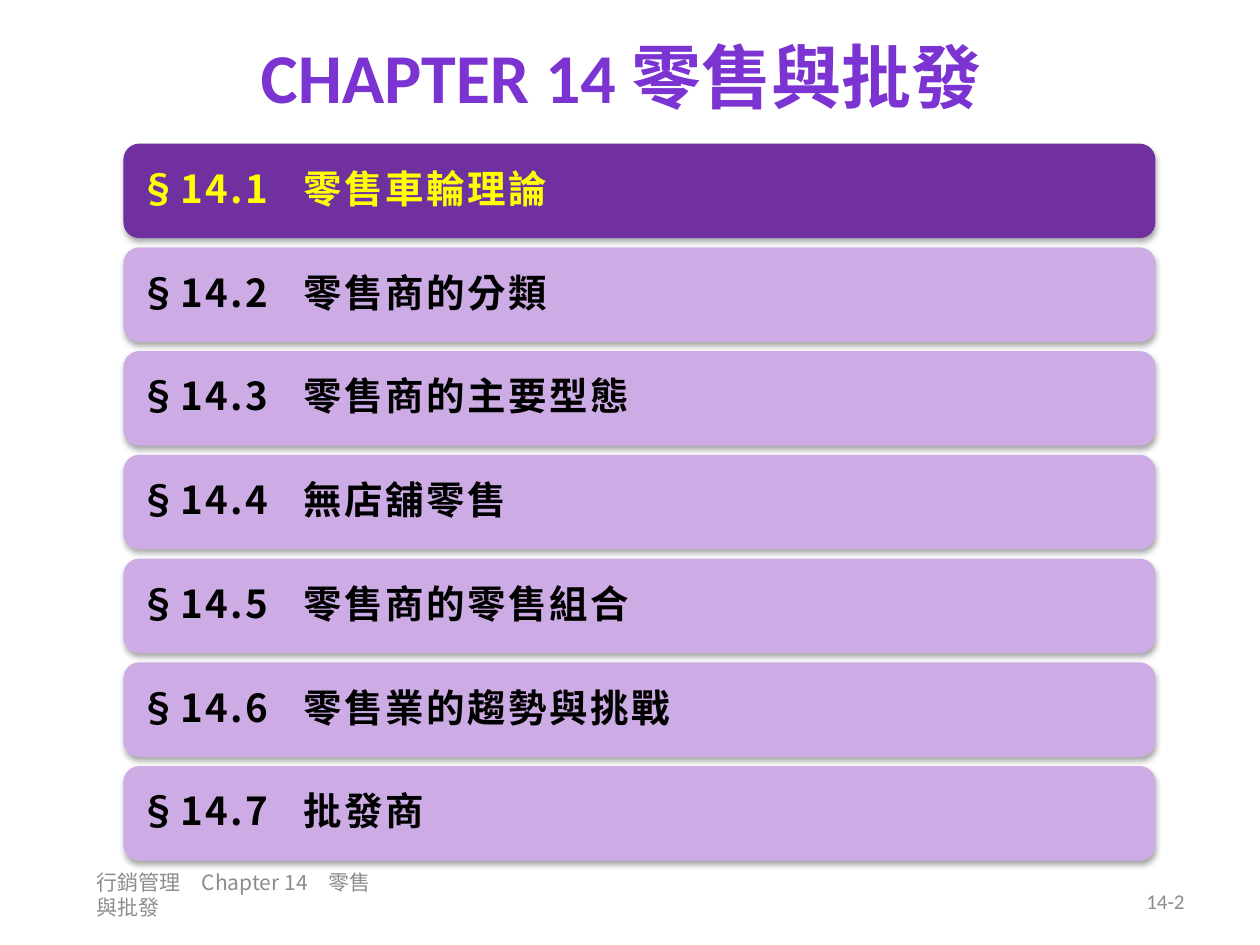
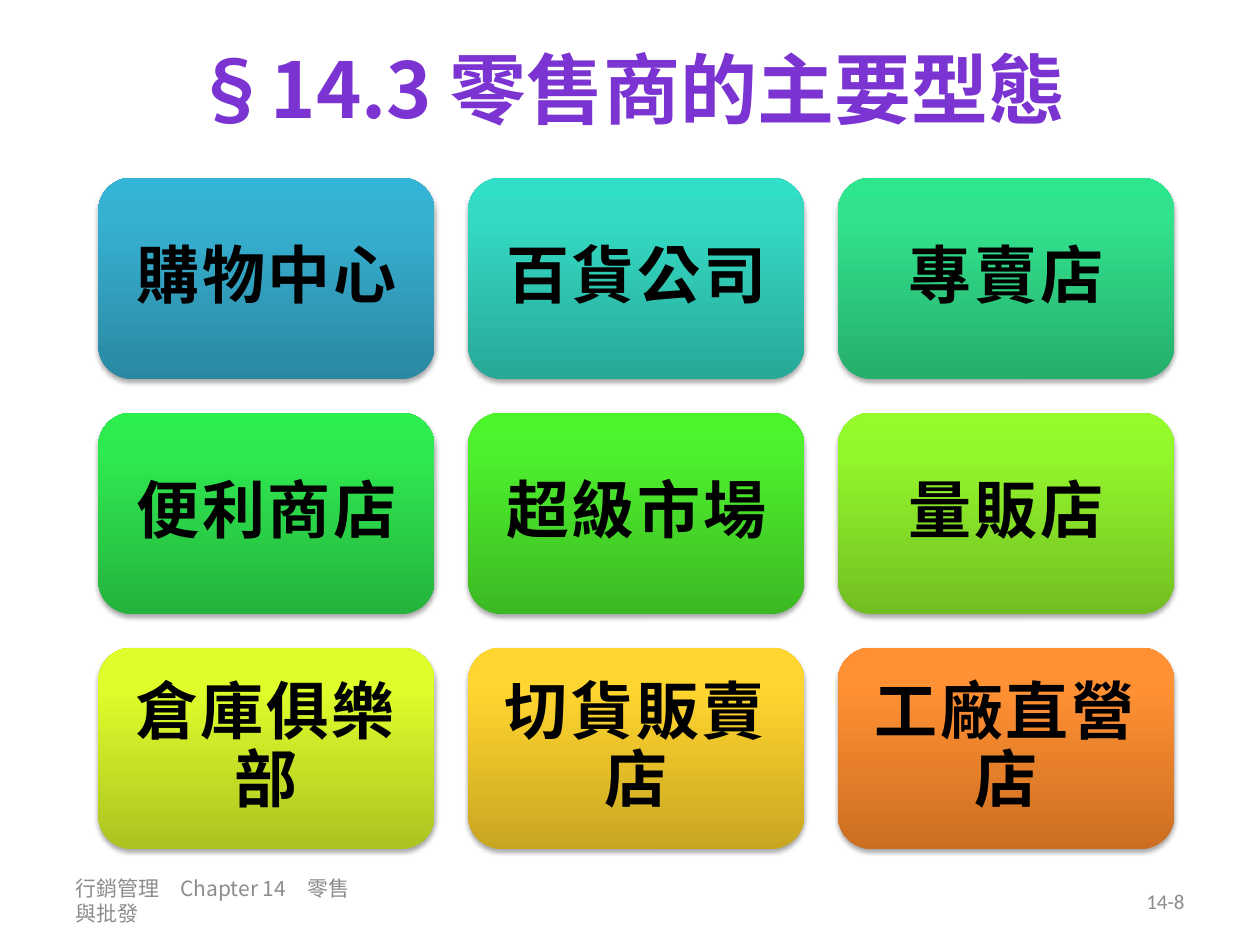
from copy import deepcopy

from lxml.etree import SubElement
from pptx import Presentation
from pptx.dml.color import RGBColor
from pptx.enum.shapes import MSO_SHAPE
from pptx.enum.text import MSO_ANCHOR, PP_ALIGN
from pptx.oxml.ns import qn
from pptx.util import Inches, Pt

LATIN_FONT = "Calibri"
CHINESE_FONT = "Noto Sans CJK SC"
TITLE_PURPLE = RGBColor(0x7B, 0x34, 0xD2)
FOOTER_GREY = RGBColor(0x8C, 0x8C, 0x8C)
BLACK = RGBColor(0, 0, 0)
YELLOW = RGBColor(0xFF, 0xFF, 0)
ACTIVE_PURPLE = RGBColor(0x70, 0x30, 0xA0)
PALE_PURPLE = RGBColor(0xCD, 0xAC, 0xE6)

FOOTER_TEXT = "行銷管理　Chapter 14　零售與批發"
SECTIONS = ["零售車輪理論", "零售商的分類", "零售商的主要型態", "無店舖零售",
            "零售商的零售組合", "零售業的趨勢與挑戰", "批發商"]
GRADIENT_POSITIONS = (0, 0.8, 1)
STORE_TYPES = [
    ("購物中心", "2A88A2", "37B1D2", "34B4D6"),
    ("百貨公司", "28A897", "34DAC4", "31DEC7"),
    ("專賣店", "26AE6D", "32E28D", "2EE68E"),
    ("便利商店", "25B33E", "2FE950", "2CEE4E"),
    ("超級市場", "3CB923", "4EF02E", "4CF52A"),
    ("量販店", "72BE22", "94F72C", "95FC29"),
    ("倉庫俱樂部", "ACC321", "DFFD2B", "E1FF2B"),
    ("切貨販賣店", "C8A621", "FFD52F", "FFD530"),
    ("工廠直營店", "CC6E20", "FF9034", "FF9136"),
]


def write_text(box, text, size, color, font=CHINESE_FONT, bold=False, align=PP_ALIGN.LEFT,
               spacing=0, line_spacing=None, margins=None, tab=None):
    """Put one formatted paragraph into a shape or text box."""
    frame = box.text_frame
    frame.word_wrap = True
    frame.vertical_anchor = MSO_ANCHOR.MIDDLE
    if margins is not None:
        frame.margin_left = frame.margin_right = Inches(margins)
        frame.margin_top = frame.margin_bottom = Inches(margins)
    para = frame.paragraphs[0]
    para.alignment = align
    if line_spacing:
        para.line_spacing = line_spacing
    if tab:
        tabs = SubElement(para._p.get_or_add_pPr(), qn("a:tabLst"))
        SubElement(tabs, qn("a:tab"), pos=str(Inches(tab)), algn="l")
    span = para.add_run()
    span.text = text
    span.font.size = Pt(size)
    span.font.bold = bold
    span.font.color.rgb = color
    span.font.name = font
    properties = span._r.get_or_add_rPr()
    properties.set("lang", "zh-TW")
    if spacing:
        properties.set("spc", str(round(spacing * 100)))
    SubElement(properties, qn("a:ea"), typeface=CHINESE_FONT)


def add_text(page, area, text, **style):
    """Add a text box over an area given in inches."""
    box = page.shapes.add_textbox(*map(Inches, area))
    write_text(box, text, **style)


def add_panel(page, area):
    """Add a borderless rounded rectangle with a soft shadow below it."""
    panel = page.shapes.add_shape(MSO_SHAPE.ROUNDED_RECTANGLE, *map(Inches, area))
    panel.line.fill.background()
    panel.shadow.inherit = False
    effects = panel._element.spPr.find(qn("a:effectLst"))
    shadow = SubElement(effects, qn("a:outerShdw"), blurRad=str(Pt(3.1)), dist=str(Pt(1.8)),
                        dir="5400000", rotWithShape="0")
    SubElement(SubElement(shadow, qn("a:srgbClr"), val="000000"), qn("a:alpha"), val="35000")
    return panel


def fill_gradient(panel, colors):
    """Fill a panel with a three-stop gradient running upwards."""
    panel.fill.gradient()
    panel.fill.gradient_angle = 90
    stops = panel._element.spPr.find(".//" + qn("a:gsLst"))
    stops.append(deepcopy(stops[0]))
    for stop, position, color in zip(panel.fill.gradient_stops, GRADIENT_POSITIONS, colors):
        stop.position = position
        stop.color.rgb = RGBColor.from_string(color)


def add_frame(page, title, title_area, title_style, footer_area, number):
    """Add the title, footer and page number."""
    add_text(page, title_area, title, color=TITLE_PURPLE, bold=True,
             align=PP_ALIGN.CENTER, **title_style)
    add_text(page, footer_area, FOOTER_TEXT, size=12, color=FOOTER_GREY)
    add_text(page, (7.17, 6.95, 2.33, 0.4), number, size=12, color=FOOTER_GREY,
             font=LATIN_FONT, align=PP_ALIGN.RIGHT)


def add_section_list(page, area, bar_height=0.75, active=1):
    """Stack the section bars evenly and highlight the active one."""
    left, top, width, height = area
    pitch = (height - bar_height) / (len(SECTIONS) - 1)
    for number, section in enumerate(SECTIONS, start=1):
        bar = add_panel(page, (left, top + (number - 1) * pitch, width, bar_height))
        bar.fill.solid()
        bar.fill.fore_color.rgb = ACTIVE_PURPLE if number == active else PALE_PURPLE
        write_text(bar, f"§14.{number}\t{section}", size=22, bold=True, spacing=1.5,
                   color=YELLOW if number == active else BLACK,
                   line_spacing=0.9, margins=0.09, tab=1.3)


def add_store_grid(page, area, columns=3, card_width=2.67, card_height=1.6):
    """Lay the store type cards out in an even grid."""
    left, top, width, height = area
    rows = len(STORE_TYPES) // columns
    across = (width - card_width) / (columns - 1)
    down = (height - card_height) / (rows - 1)
    for index, (store, *colors) in enumerate(STORE_TYPES):
        row, column = divmod(index, columns)
        card = add_panel(page, (left + column * across, top + row * down,
                                card_width, card_height))
        fill_gradient(card, colors)
        write_text(card, store, size=36, color=BLACK, bold=True, align=PP_ALIGN.CENTER,
                   spacing=1.5, line_spacing=0.9, margins=0.15)


def main():
    """Build and save the deck."""
    deck = Presentation()
    deck.slide_width, deck.slide_height = Inches(10), Inches(7.5)
    blank = deck.slide_layouts[6]

    page = deck.slides.add_slide(blank)
    add_frame(page, "CHAPTER 14 零售與批發", (0.43, 0.04, 9, 1.12),
              {"size": 40, "font": LATIN_FONT}, (0.67, 6.9, 2.44, 0.4), "14-2")
    add_section_list(page, (0.98, 1.14, 8.19, 5.69))

    page = deck.slides.add_slide(blank)
    add_frame(page, "§14.3 零售商的主要型態", (0.5, 0, 9, 1.39),
              {"size": 44}, (0.5, 6.95, 2.45, 0.4), "14-8")
    add_store_grid(page, (0.78, 1.41, 8.54, 5.33))

    deck.save("out.pptx")


if __name__ == "__main__":
    main()
